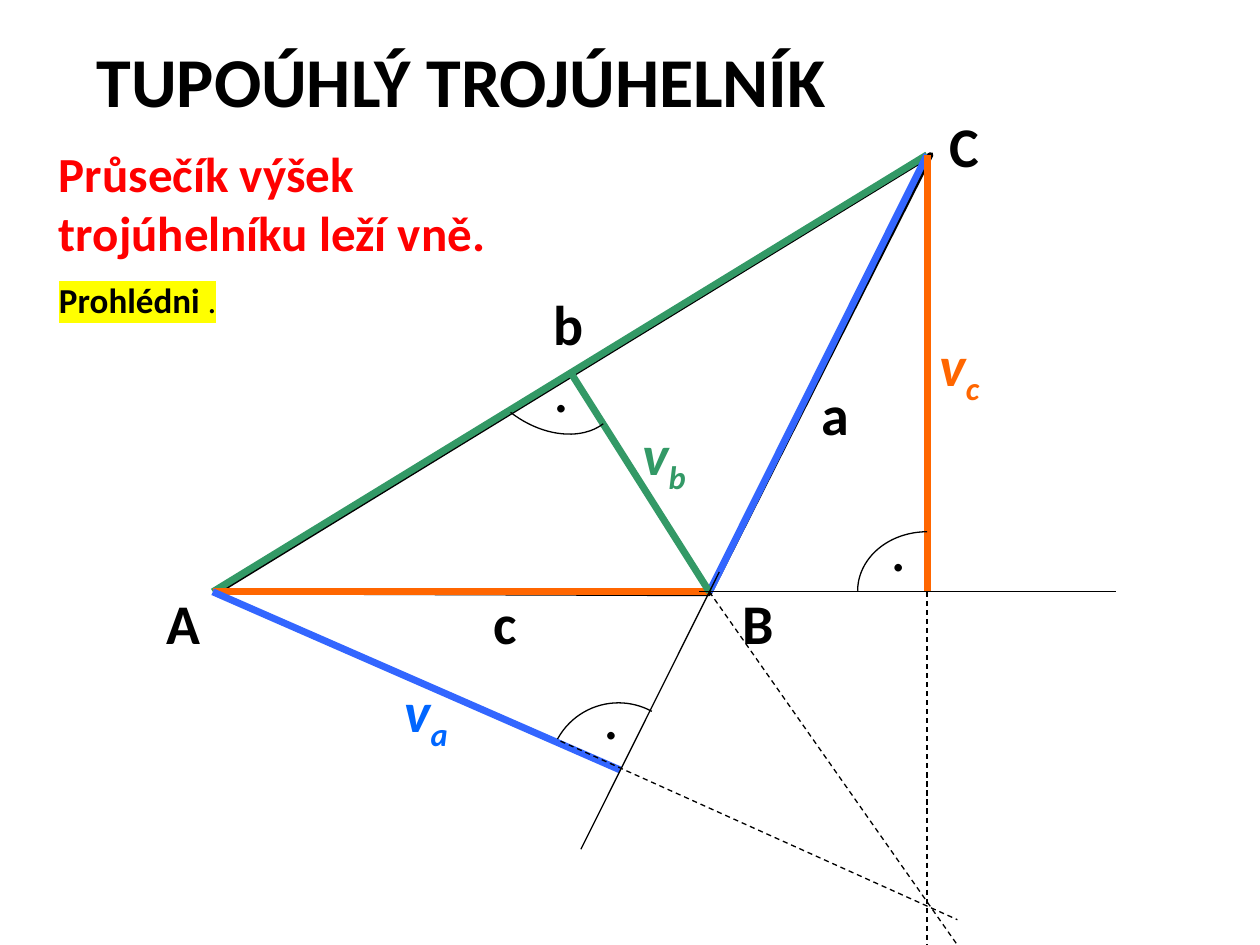
import dataclasses
import typing

import lxml.etree
import pptx
import pptx.dml.color
import pptx.enum.dml
import pptx.enum.shapes
import pptx.enum.text
import pptx.oxml.ns
import pptx.util

Cm = pptx.util.Cm
Point = typing.Tuple[float, float]
HUES = {"black": "000000", "red": "FF0000", "green": "339966", "blue": "3366FF",
        "azure": "0066FF", "orange": "FF6600", "yellow": "FFFF00"}


@dataclasses.dataclass
class Label:
    text: str
    at: Point
    size: Point = (1.6, 1.6)
    points: int = 32
    hue: str = "black"
    bold: bool = True
    sub: str = ""


@dataclasses.dataclass
class Line:
    start: Point
    end: Point
    hue: str = "black"
    width: float = 0.75
    dash: bool = False


@dataclasses.dataclass
class Arc:
    mid: Point
    radii: Point
    start: float
    end: float
    turn: float = 0


A, B, C = (4.29, 11.93), (14.3, 11.93), (18.69, 3.12)
FOOT_A, FOOT_B, FOOT_C = (12.5, 15.52), (11.51, 7.52), (C[0], A[1])
DOT = {"size": (1.8, 1.78), "points": 36, "bold": False}

LABELS = [
    Label("TUPOÚHLÝ TROJÚHELNÍK", (1.7, 0.64), (16.61, 1.96), 40),
    Label("A", (3.1, 11.73)),
    Label("B", (14.71, 11.73)),
    Label("C", (18.9, 2.13)),
    Label("b", (10.9, 5.72)),
    Label("c", (9.7, 11.73)),
    Label("a", (16.31, 7.52)),
    Label("v", (18.69, 6.53), (2.21, 1.6), hue="orange", sub="c"),
    Label("v", (12.7, 8.33), (1.8, 1.6), hue="green", sub="b"),
    Label("v", (7.9, 13.51), (1.55, 1.6), hue="azure", sub="a"),
    Label(".", (17.7, 10.13), **DOT),
    Label(".", (10.9, 6.93), **DOT),
    Label(".", (11.91, 13.51), **DOT),
]
LINES = [
    Line(C, A, "green", 4),
    Line(C, B, "blue", 4),
    Line(A, B, "orange", 4),
    Line(FOOT_C, C, "orange", 4),
    Line(FOOT_A, A, "blue", 4),
    Line(FOOT_B, B, "green", 4),
    Line((14.1, B[1]), (22.5, B[1])),
    Line((11.71, 17.12), (14.5, 11.53)),
    Line(B, (19.3, 19.05), dash=True),
    Line((11.3, 14.94), (19.3, 18.54), dash=True),
    Line(FOOT_C, (C[0], 19.05), dash=True),
]
ARCS = [
    Arc((18.69, 11.91), (1.4, 1.19), 180, 270),
    Arc((12.47, 15.57), (1.4, 1.4), 208.6, 298.6),
    Arc((11.02, 7.37), (1.65, 1.19), 188, 270, 217.7),
]


def paint(hue: str) -> pptx.dml.color.RGBColor:
    """Return the named colour."""
    return pptx.dml.color.RGBColor.from_string(HUES[hue])


def style(run, points: int, hue: str, bold: bool = True, slant: bool = False) -> None:
    """Set the font of a run."""
    font = run.font
    font.name, font.size = "Calibri", pptx.util.Pt(points)
    font.bold, font.italic = bold, slant
    font.color.rgb = paint(hue)


def mark(run, hue: str) -> None:
    """Highlight a run that already has a colour."""
    name = pptx.oxml.ns.qn
    light = lxml.etree.Element(name("a:highlight"))
    lxml.etree.SubElement(light, name("a:srgbClr")).set("val", HUES[hue])
    run._r.get_or_add_rPr().find(name("a:solidFill")).addnext(light)


def add_box(slide, at: Point, size: Point):
    """Add a wrapped text box and return its frame."""
    box = slide.shapes.add_textbox(*map(Cm, at + size))
    frame = box.text_frame
    frame.word_wrap = True
    frame.auto_size = pptx.enum.text.MSO_AUTO_SIZE.SHAPE_TO_FIT_TEXT
    return frame


def add_label(slide, label: Label) -> None:
    """Draw a label with its optional subscript."""
    frame = add_box(slide, label.at, label.size)
    frame.text = label.text
    para = frame.paragraphs[0]
    if label.sub:
        low = para.add_run()
        low.text = label.sub
        low._r.get_or_add_rPr().set("baseline", "-25000")
    for run in para.runs:
        style(run, label.points, label.hue, label.bold, bool(label.sub))


def add_note(slide) -> None:
    """Draw the red statement and the marked prompt."""
    frame = add_box(slide, (0.94, 2.77), (9.8, 3.94))
    frame.text = "Průsečík výšek trojúhelníku leží vně.\nProhlédni"
    fact, hint = frame.paragraphs
    style(fact.runs[0], 28, "red")
    hint.space_before = pptx.util.Pt(10)
    hint.add_run().text = " ."
    for run, bold in zip(hint.runs, (True, False)):
        style(run, 20, "black", bold)
        mark(run, "yellow")


def add_line(slide, line: Line) -> None:
    """Draw a straight line."""
    kind = pptx.enum.shapes.MSO_CONNECTOR.STRAIGHT
    link = slide.shapes.add_connector(kind, *map(Cm, line.start + line.end))
    link.line.color.rgb = paint(line.hue)
    link.line.width = pptx.util.Pt(line.width)
    if line.dash:
        link.line.dash_style = pptx.enum.dml.MSO_LINE.DASH
    props = link._element.spPr
    lxml.etree.SubElement(props, pptx.oxml.ns.qn("a:effectLst"))


def add_form(slide, kind, at: Point, size: Point, width: float, turn: float):
    """Draw an unfilled black outline."""
    form = slide.shapes.add_shape(kind, *map(Cm, at + size))
    form.shadow.inherit = False
    form.fill.background()
    form.line.color.rgb = paint("black")
    form.line.width = pptx.util.Pt(width)
    form.rotation = turn
    return form


def add_arc(slide, arc: Arc) -> None:
    """Draw an angle arc about its centre."""
    (x, y), (wide, high) = arc.mid, arc.radii
    kind = pptx.enum.shapes.MSO_SHAPE.ARC
    form = add_form(slide, kind, (x - wide, y - high), (2 * wide, 2 * high), 0.75, arc.turn)
    for spot, angle in enumerate((arc.start, arc.end)):
        form.adjustments[spot] = angle * 0.6


def main() -> None:
    """Build and save the slide."""
    deck = pptx.Presentation()
    deck.slide_width, deck.slide_height = Cm(25.4), Cm(19.05)
    slide = deck.slides.add_slide(deck.slide_layouts[6])
    kind = pptx.enum.shapes.MSO_SHAPE.ISOSCELES_TRIANGLE
    add_form(slide, kind, (4.5, 7.14), (16.87, 5.21), 3, 148.5)
    for label in LABELS:
        add_label(slide, label)
    add_note(slide)
    for line in LINES:
        add_line(slide, line)
    for arc in ARCS:
        add_arc(slide, arc)
    deck.save("out.pptx")


if __name__ == "__main__":
    main()
